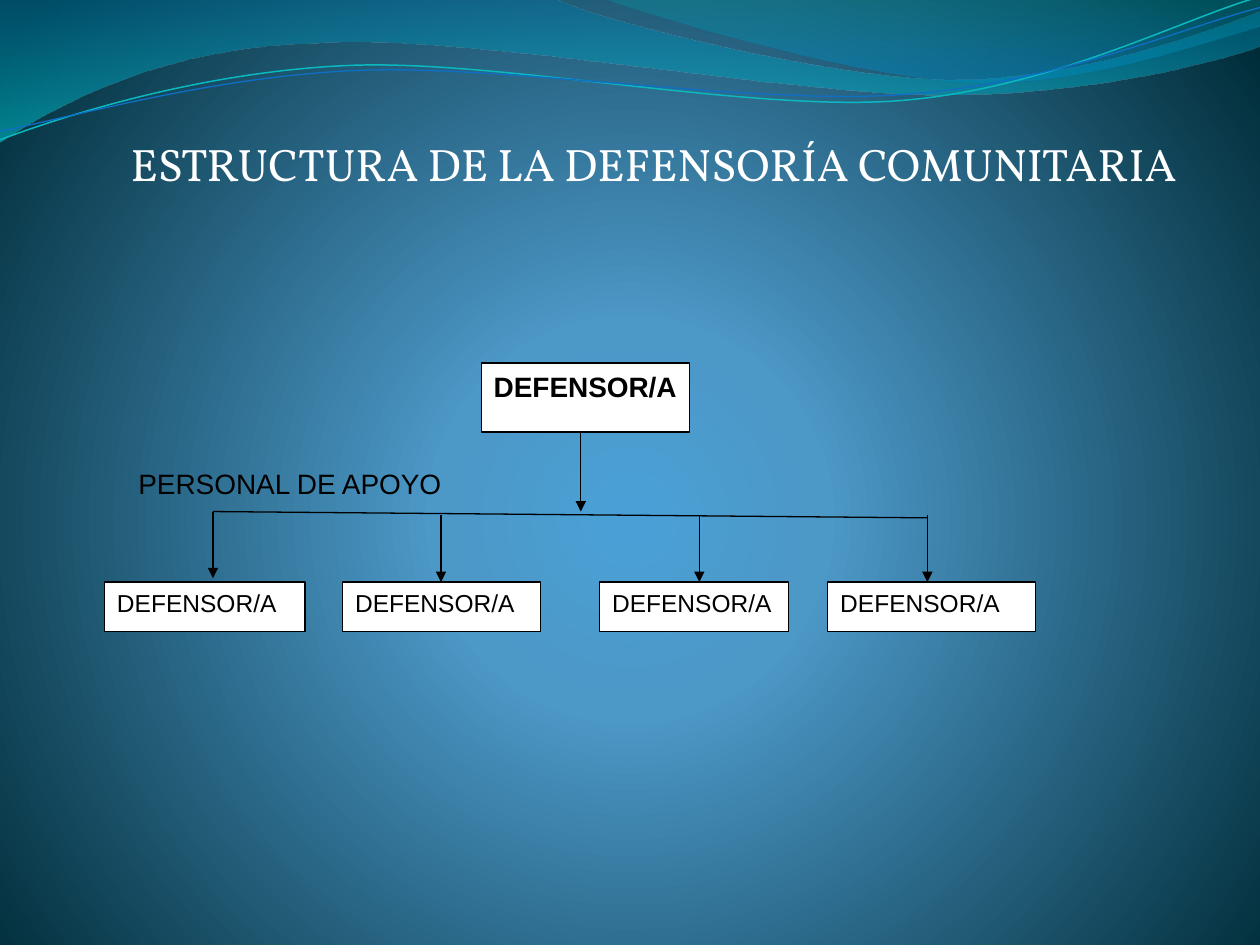
from pptx import Presentation, util as u
from pptx.dml.color import RGBColor
from pptx.enum import shapes, text
from pptx.oxml import ns
from lxml import etree

TITLE = "ESTRUCTURA DE LA DEFENSORÍA COMUNITARIA"
STAFF = "PERSONAL DE APOYO"
ROLE = "DEFENSOR/A"
BACK = [(0, "4AA0D6", 100), (25, "4C98C7", 100), (100, "002C38", 100)]
CIRCLE = ("path", {"path": "circle"})
DOWN = ("lin", {"ang": "5400000", "scaled": "0"})

WAVES = [
    ([(0, 0), (4.4, -0.01), (4.76, 0.17, 6.64, 0.63, 7.58, 0.63),
      (8.53, 0.63, 9.58, 0.26, 10, 0.09), (10.01, 0.36),
      (9.83, 0.44, 8.7, 0.76, 7.46, 0.75), (6.22, 0.75, 3.82, 0.28, 2.57, 0.34),
      (1.29, 0.36, 0.46, 0.83, -0.01, 1.13)],
     [(0, "0074A1", 45), (100, "00C6CF", 55)]),
    ([(4.79, -0.01), (5.09, 0.11, 6.82, 0.62, 7.69, 0.65),
      (8.56, 0.69, 9.61, 0.32, 10, 0.21), (10, 0)],
     [(0, "00A1A9", 30), (80, "008BBF", 45)]),
]
STROKES = [
    ([(0, 1.11), (0.48, 0.93, 1.58, 0.57, 2.77, 0.52),
      (3.95, 0.47, 5.93, 0.89, 7.13, 0.8), (8.33, 0.71, 9.38, 0.15, 9.98, -0.02)],
     "0AB8BF", 0.85),
    ([(0, 1.04), (0.47, 0.96, 1.64, 0.61, 2.83, 0.56),
      (4.03, 0.51, 5.97, 0.84, 7.17, 0.75), (8.36, 0.67, 9.41, 0.21, 10, 0.06)],
     "0F6FC6", 0.75),
]
HEAD = (3.82, 2.88, 1.65, 0.55)
ROW, TALL = 4.62, 0.39
TEAM = [(0.83, 1.59), (2.72, 1.57), (4.76, 1.5), (6.57, 1.65)]
LINES = [
    (4.61, 3.44, 4.61, 4.06, True), (1.69, 4.06, 7.36, 4.11, False),
    (1.69, 4.06, 1.69, 4.59, True),
] + [(x, 4.09, x, ROW, True) for x in (3.5, 5.55, 7.36)]


def tint(code):
    return RGBColor.from_string(code)


def sub(node, tag, **vals):
    return etree.SubElement(node, ns.qn("a:" + tag), vals)


def blend(fill, root, stops, way):
    fill.gradient()
    grad = next(root.iter(ns.qn("a:gradFill")))
    for kid in list(grad):
        grad.remove(kid)
    bar = sub(grad, "gsLst")
    for at, code, full in stops:
        stop = sub(bar, "gs", pos=str(at * 1000))
        sub(sub(stop, "srgbClr", val=code), "alpha", val=str(full * 1000))
    return sub(grad, way[0], **way[1])


def curve(slide, steps, close):
    ends = [(u.Inches(step[-2]), u.Inches(step[-1])) for step in steps]
    pen = slide.shapes.build_freeform(*ends[0])
    pen.add_line_segments(ends[1:], close=close)
    shape = pen.convert_to_shape()
    shape.shadow.inherit = False
    legs = list(shape.element.iter(ns.qn("a:lnTo")))
    for leg, step in zip(legs, steps[1:]):
        if len(step) == 6:
            bend = etree.Element(ns.qn("a:cubicBezTo"))
            for x, y in zip(step[::2], step[1::2]):
                sub(bend, "pt", x=str(u.Inches(x) - shape.left),
                    y=str(u.Inches(y) - shape.top))
            leg.getparent().replace(leg, bend)
    return shape


def write(shape, words, size, font="Arial", code="000000", bold=False,
          side=text.PP_ALIGN.LEFT, pad=(0.1, 0.05, 0, 0.05)):
    frame = shape.text_frame
    frame.word_wrap = True
    frame.auto_size = text.MSO_AUTO_SIZE.NONE
    frame.vertical_anchor = text.MSO_ANCHOR.TOP
    (frame.margin_left, frame.margin_top,
     frame.margin_right, frame.margin_bottom) = map(u.Inches, pad)
    para = frame.paragraphs[0]
    para.alignment, para.space_before = side, u.Pt(0)
    run = para.add_run()
    run.text = words
    run.font.size, run.font.name, run.font.bold = u.Pt(size), font, bold
    run.font.color.rgb = tint(code)
    return para


def card(slide, spot, size, bold=False):
    box = slide.shapes.add_shape(shapes.MSO_SHAPE.RECTANGLE, *map(u.Inches, spot))
    box.shadow.inherit = False
    box.fill.solid()
    box.fill.fore_color.rgb = tint("FFFFFF")
    box.line.color.rgb, box.line.width = tint("000000"), u.Pt(0.75)
    write(box, ROLE, size, bold=bold)


def link(slide, spot, tip):
    line = slide.shapes.add_connector(shapes.MSO_CONNECTOR.STRAIGHT, *map(u.Inches, spot))
    line.line.color.rgb, line.line.width = tint("000000"), u.Pt(0.75)
    if tip:
        sub(line.line._get_or_add_ln(), "tailEnd", type="triangle")
    sub(line.element.spPr, "effectLst")


def main():
    """Build the slide with the structure of the community ombuds office."""
    deck = Presentation()
    deck.slide_width, deck.slide_height = u.Inches(10), u.Inches(7.5)
    slide = deck.slides.add_slide(deck.slide_layouts[0])
    way = blend(slide.background.fill, slide.element, BACK, CIRCLE)
    sub(way, "fillToRect", l="10000", t="110000", r="10000", b="100000")

    name = slide.shapes.title.element
    name.getparent().remove(name)
    head = slide.placeholders[1]
    for steps, stops in WAVES:
        wave = curve(slide, steps, True)
        blend(wave.fill, wave.element, stops, DOWN)
        wave.line.fill.background()
        head.element.addprevious(wave.element)
    for steps, code, wide in STROKES:
        wave = curve(slide, steps, False)
        wave.fill.background()
        wave.line.color.rgb, wave.line.width = tint(code), u.Pt(wide)
        head.element.addprevious(wave.element)

    head.left, head.top, head.width, head.height = map(u.Inches, (0.83, 0.52, 8.59, 6.46))
    write(head, TITLE, 26, "Vollkorn", "FFFFFF", side=text.PP_ALIGN.RIGHT,
          pad=(0, 0.56, 0.07, 0.05))

    card(slide, HEAD, 16, True)
    for spot in LINES:
        link(slide, spot[:4], spot[4])
    note = slide.shapes.add_textbox(*map(u.Inches, (0.51, 3.13, 3.13, 1.08)))
    para = write(note, STAFF, 16, pad=(0.1, 0.57, 0, 0.05))
    para._p.get_or_add_pPr().set("indent", str(u.Inches(0.49)))
    for left, wide in TEAM:
        card(slide, (left, ROW, wide, TALL), 14)
    deck.save("out.pptx")


if __name__ == "__main__":
    main()
